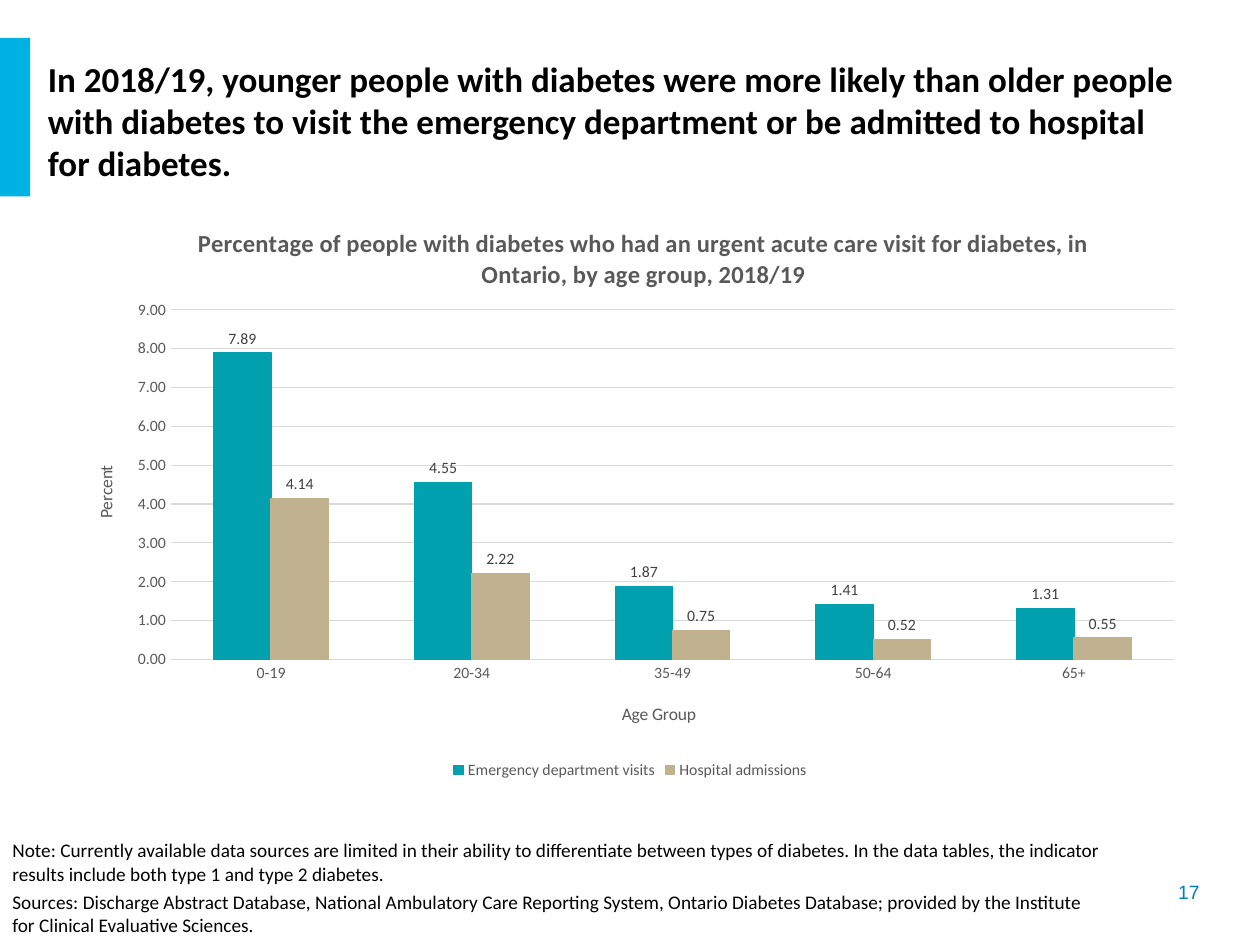
from lxml import etree
from pptx import Presentation
from pptx.chart.data import CategoryChartData
from pptx.dml.color import RGBColor
from pptx.enum.chart import XL_CHART_TYPE, XL_LABEL_POSITION, XL_LEGEND_POSITION, XL_TICK_MARK
from pptx.enum.dml import MSO_LINE
from pptx.enum.shapes import MSO_SHAPE
from pptx.enum.text import MSO_ANCHOR, MSO_AUTO_SIZE, PP_ALIGN
from pptx.oxml.ns import qn
from pptx.util import Inches, Pt

COLUMN = XL_CHART_TYPE.COLUMN_CLUSTERED
OUTSIDE = XL_LABEL_POSITION.OUTSIDE_END
BOTTOM = XL_LEGEND_POSITION.BOTTOM
NO_TICK = XL_TICK_MARK.NONE
DOTTED = MSO_LINE.ROUND_DOT
RECTANGLE = MSO_SHAPE.RECTANGLE
TOP, MIDDLE = MSO_ANCHOR.TOP, MSO_ANCHOR.MIDDLE
FIXED = MSO_AUTO_SIZE.NONE
LEFT, RIGHT = PP_ALIGN.LEFT, PP_ALIGN.RIGHT

WIDTH, HEIGHT = 10, 7.5
BLACK, WHITE, GREY, PALE = "000000", "FFFFFF", "595959", "D9D9D9"

HEADLINE = (
    "In 2018/19, younger people with diabetes were more likely than older people\v"
    "with diabetes to visit the emergency department or be admitted to hospital\v"
    "for diabetes."
)
NOTES = [
    "Note: Currently available data sources are limited in their ability to differentiate between "
    "types of diabetes. In the data tables, the indicator results include both type 1 and type 2 diabetes.",
    "Sources:\u00a0Discharge Abstract Database, National Ambulatory Care Reporting System, Ontario "
    "Diabetes Database; provided by the Institute for Clinical Evaluative Sciences.",
]
CHART_TITLE = (
    "Percentage of people with diabetes who had an urgent acute care visit for diabetes, "
    "in Ontario, by age group, 2018/19"
)
AGE_GROUPS = ["0-19", "20-34", "35-49", "50-64", "65+"]
SERIES = [
    ("Emergency department visits", "00A0AF", [7.89, 4.55, 1.87, 1.41, 1.31]),
    ("Hospital admissions", "C1B28F", [4.14, 2.22, 0.75, 0.52, 0.55]),
]


def color(value):
    """Turn a hex string into a colour."""
    return RGBColor.from_string(value)


def place(box):
    """Turn shares of the slide into left, top, width and height."""
    left, top, width, height = box
    return Inches(left * WIDTH), Inches(top * HEIGHT), Inches(width * WIDTH), Inches(height * HEIGHT)


def set_font(font, size, hue=GREY, bold=False, name="Calibri"):
    """Format one font object."""
    font.name, font.size, font.bold = name, Pt(size), bold
    font.color.rgb = color(hue)


def set_line(line, hue, width=0.75):
    """Give a line its colour and width."""
    line.color.rgb = color(hue)
    line.width = Pt(width)


def write(frame, paragraphs, size, hue=BLACK, bold=False, name="Calibri",
          align=LEFT, anchor=TOP, gap=0):
    """Fill a text frame with formatted paragraphs."""
    frame.word_wrap, frame.auto_size, frame.vertical_anchor = True, FIXED, anchor
    for index, text in enumerate(paragraphs):
        para = frame.add_paragraph() if index else frame.paragraphs[0]
        para.text = text
        para.alignment = align
        para.space_before = Pt(gap if index else 0)
        for span in para.runs:
            set_font(span.font, size, hue, bold, name)


def set_layout(element, **shares):
    """Fix the position of a chart part by shares of the chart."""
    layout = element.find(qn("c:layout"))
    if layout is None:
        layout = etree.Element(qn("c:layout"))
        element.insert(0, layout)
    for child in list(layout):
        layout.remove(child)
    manual = etree.SubElement(layout, qn("c:manualLayout"))
    if "w" in shares:
        etree.SubElement(manual, qn("c:layoutTarget")).set("val", "inner")
    for mode in ("xMode", "yMode"):
        etree.SubElement(manual, qn(f"c:{mode}")).set("val", "edge")
    for key, share in shares.items():
        etree.SubElement(manual, qn(f"c:{key}")).set("val", str(share))


def add_chart_text(title, text, size, x, y, bold=False, rotation=0):
    """Write a chart or axis title and put it in its place."""
    para = title.text_frame.paragraphs[0]
    span = para.add_run()
    span.text = text
    set_font(span.font, size, bold=bold)
    title.element.find(".//" + qn("a:bodyPr")).set("rot", str(rotation * 60000))
    set_layout(title.element, x=x, y=y)


def add_headline(page, bar_box, title_box):
    """Place the accent bar and the slide title."""
    bar = page.shapes.add_shape(RECTANGLE, *place(bar_box))
    bar.shadow.inherit = False
    bar.fill.solid()
    bar.fill.fore_color.rgb = color("00B2E3")
    bar.line.fill.background()
    title = page.shapes.title
    title.left, title.top, title.width, title.height = place(title_box)
    set_line(title.line, WHITE, 3)
    title.line.dash_style = DOTTED
    write(title.text_frame, [HEADLINE], 20, bold=True, anchor=MIDDLE)


def add_visits_chart(page, box):
    """Place the column chart of urgent visits by age group."""
    data = CategoryChartData(number_format="0.00")
    data.categories = AGE_GROUPS
    for name, _, values in SERIES:
        data.add_series(name, values)
    chart = page.shapes.add_chart(COLUMN, *place(box), data).chart
    set_font(chart.font, 10, BLACK)
    chart.has_title = True
    add_chart_text(chart.chart_title, CHART_TITLE, 14, 0.115, 0.04, bold=True)
    chart.has_legend = True
    chart.legend.position = BOTTOM
    chart.legend.include_in_layout = False
    set_font(chart.legend.font, 9)

    plot = chart.plots[0]
    plot.gap_width, plot.overlap, plot.vary_by_categories = 150, 0, False
    for series, (_, hue, _) in zip(plot.series, SERIES):
        series.format.fill.solid()
        series.format.fill.fore_color.rgb = color(hue)
        set_line(series.format.line, hue)
        labels = series.data_labels
        labels.show_value, labels.position = True, OUTSIDE
        set_font(labels.font, 9, "404040")

    ages, percent = chart.category_axis, chart.value_axis
    for axis in (ages, percent):
        axis.major_tick_mark = axis.minor_tick_mark = NO_TICK
        set_font(axis.tick_labels.font, 9)
    set_line(ages.format.line, PALE)
    percent.format.line.fill.background()
    set_line(percent.major_gridlines.format.line, PALE)
    percent.minimum_scale, percent.maximum_scale, percent.major_unit = 0, 9, 1
    percent.tick_labels.number_format = "#,##0.00"
    percent.tick_labels.number_format_is_linked = False
    add_chart_text(ages.axis_title, "Age Group", 10, 0.49, 0.855)
    add_chart_text(percent.axis_title, "Percent", 10, 0.025, 0.45, rotation=-90)
    set_layout(chart.element.find(".//" + qn("c:plotArea")), x=0.095, y=0.19, w=0.885, h=0.597)


def add_footer(page, notes_box, number_box):
    """Place the notes and the page number."""
    notes = page.shapes.add_textbox(*place(notes_box))
    write(notes.text_frame, NOTES, 11, gap=3)
    number = page.shapes.add_textbox(*place(number_box))
    write(number.text_frame, ["17"], 11, "047BC1", name="Arial", align=RIGHT, anchor=MIDDLE)


def main():
    """Build the slide and save it."""
    deck = Presentation()
    deck.slide_width, deck.slide_height = Inches(WIDTH), Inches(HEIGHT)
    page = deck.slides.add_slide(deck.slide_layouts[5])
    add_headline(page, (0, 0.04, 0.024, 0.168), (0.028, 0.053, 0.972, 0.148))
    add_visits_chart(page, (0.05, 0.21, 0.9, 0.62))
    add_footer(page, (0, 0.881, 0.89, 0.12), (0.845, 0.924, 0.117, 0.039))
    deck.save("out.pptx")


if __name__ == "__main__":
    main()
